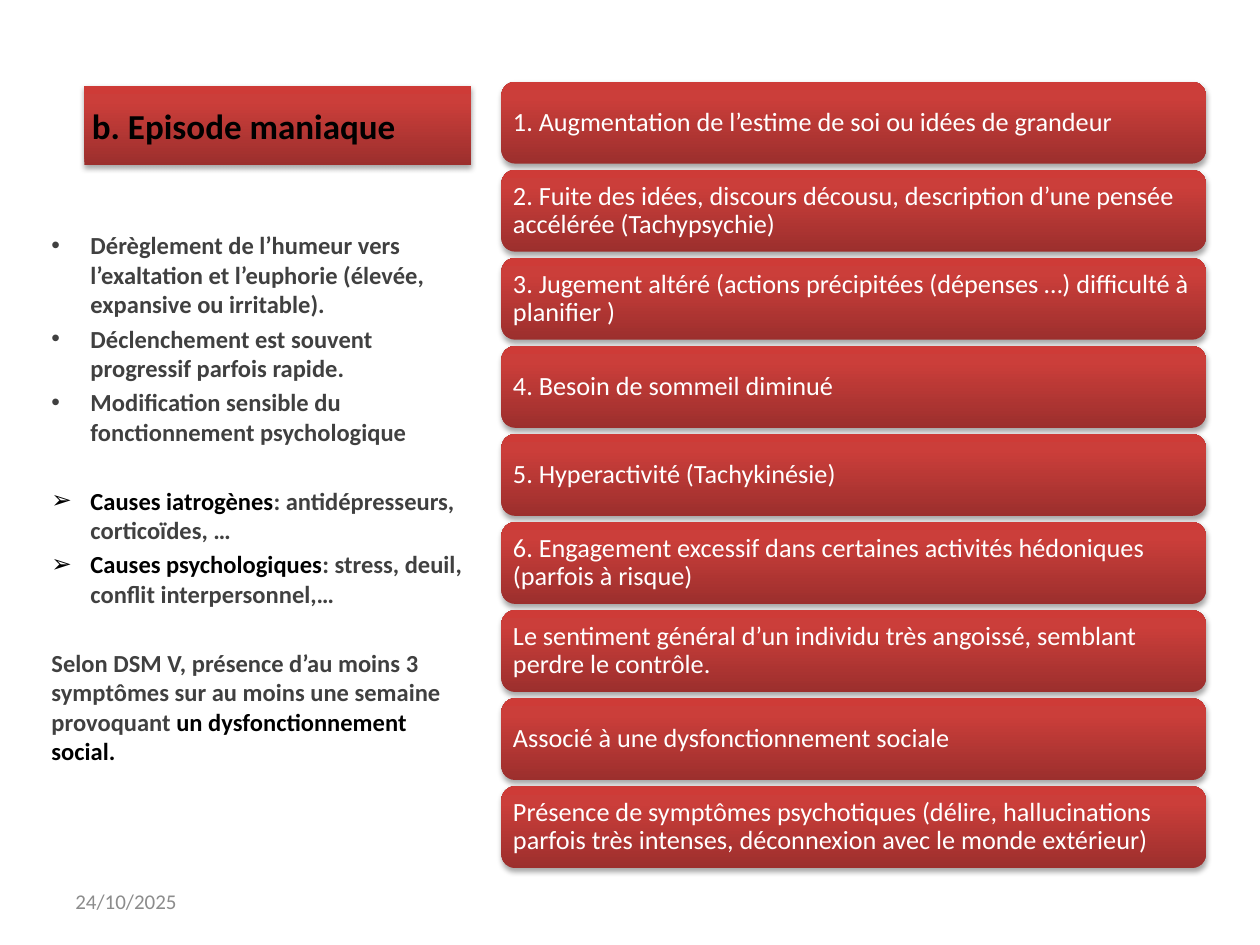
from lxml import etree
from pptx import Presentation
from pptx.dml.color import RGBColor
from pptx.enum.shapes import MSO_SHAPE
from pptx.enum.text import MSO_ANCHOR, PP_ALIGN
from pptx.oxml import parse_xml
from pptx.oxml.ns import nsdecls, qn
from pptx.util import Inches, Pt

BLACK = RGBColor(0x00, 0x00, 0x00)
WHITE = RGBColor(0xFF, 0xFF, 0xFF)
DARK_GREY = RGBColor(0x40, 0x40, 0x40)
DATE_GREY = RGBColor(0x8C, 0x8C, 0x8C)
RED_STOPS = [
    (0, RGBColor(0x9C, 0x2F, 0x2D)),
    (80, RGBColor(0xCB, 0x3E, 0x3A)),
    (100, RGBColor(0xCE, 0x3B, 0x37)),
]
FONT = "Calibri"
PARAGRAPH_GAP = Pt(2.8)
SECTION_GAP = Pt(22.6)

# Each entry: bullet, space before, runs as (text, colour)
DESCRIPTION = [
    ("•", None, [("Dérèglement de l’humeur vers l’exaltation et l’euphorie "
                  "(élevée, expansive ou irritable).", DARK_GREY)]),
    ("•", PARAGRAPH_GAP, [("Déclenchement est souvent progressif parfois rapide.", DARK_GREY)]),
    ("•", PARAGRAPH_GAP, [("Modification sensible du fonctionnement psychologique", DARK_GREY)]),
    ("➢", SECTION_GAP, [("Causes iatrogènes", BLACK),
                        (": antidépresseurs, corticoïdes, …", DARK_GREY)]),
    ("➢", PARAGRAPH_GAP, [("Causes psychologiques", BLACK),
                          (": stress, deuil, conflit interpersonnel,…", DARK_GREY)]),
    (None, SECTION_GAP, [("Selon DSM V, présence d’au moins 3 symptômes sur au moins "
                          "une semaine provoquant ", DARK_GREY),
                         ("un dysfonctionnement social.", BLACK)]),
]

SYMPTOMS = [
    "1. Augmentation de l’estime de soi ou idées de grandeur",
    "2. Fuite des idées, discours décousu, description d’une pensée accélérée (Tachypsychie)",
    "3. Jugement altéré (actions précipitées (dépenses …) difficulté à planifier )",
    "4. Besoin de sommeil diminué",
    "5. Hyperactivité (Tachykinésie)",
    "6. Engagement excessif dans certaines activités hédoniques (parfois à risque)",
    "Le sentiment général d’un individu très angoissé, semblant perdre le contrôle.",
    "Associé à une dysfonctionnement sociale",
    "Présence de symptômes psychotiques (délire, hallucinations parfois très intenses, "
    "déconnexion avec le monde extérieur)",
]


def style_font(font, size, color=None, bold=False):
    font.name = FONT
    font.size = Pt(size)
    font.bold = bold
    if color is not None:
        font.color.rgb = color


def add_red_panel(slide, preset, box, text, size, color, bold=False):
    """Add a shape with the red gradient, a soft shadow and left-aligned text."""
    shape = slide.shapes.add_shape(preset, *box)
    shape.line.fill.background()
    stops = "".join(
        f'<a:gs pos="{position * 1000}"><a:srgbClr val="{stop}"/></a:gs>'
        for position, stop in RED_STOPS
    )
    gradient = parse_xml(
        f'<a:gradFill {nsdecls("a")} rotWithShape="1"><a:gsLst>{stops}</a:gsLst>'
        '<a:lin ang="16200000" scaled="0"/></a:gradFill>'
    )
    shadow = parse_xml(
        f'<a:effectLst {nsdecls("a")}><a:outerShdw blurRad="{Pt(3.1)}" dist="{Pt(1.8)}" '
        'dir="5400000" rotWithShape="0"><a:srgbClr val="000000"><a:alpha val="35000"/>'
        '</a:srgbClr></a:outerShdw></a:effectLst>'
    )
    properties = shape.element.spPr
    properties.find(qn("a:ln")).addprevious(gradient)
    properties.append(shadow)

    frame = shape.text_frame
    frame.word_wrap = True
    frame.vertical_anchor = MSO_ANCHOR.MIDDLE
    frame.margin_left = frame.margin_right = Inches(0.06)
    frame.margin_top = frame.margin_bottom = Inches(0.06)
    paragraph = frame.paragraphs[0]
    paragraph.text = text
    paragraph.alignment = PP_ALIGN.LEFT
    style_font(paragraph.font, size, color, bold)
    return paragraph


def add_title(slide, box):
    add_red_panel(slide, MSO_SHAPE.RECTANGLE, box, "b. Episode maniaque", 20, BLACK, bold=True)


def set_bullet(paragraph, character):
    indent = Inches(0.31)
    properties = paragraph._p.get_or_add_pPr()
    properties.set("marL", str(indent))
    properties.set("indent", str(-indent))
    etree.SubElement(properties, qn("a:buFont"), typeface="Arial")
    etree.SubElement(properties, qn("a:buChar"), char=character)


def add_description(slide, box):
    frame = slide.shapes.add_textbox(*box).text_frame
    frame.word_wrap = True
    for index, (bullet, space_before, runs) in enumerate(DESCRIPTION):
        paragraph = frame.add_paragraph() if index else frame.paragraphs[0]
        if bullet:
            set_bullet(paragraph, bullet)
        if space_before is not None:
            paragraph.space_before = space_before
        style_font(paragraph.font, 14, bold=True)
        for text, color in runs:
            run = paragraph.add_run()
            run.text = text
            run.font.color.rgb = color


def add_symptoms(slide, box):
    """Stack one rounded tile per symptom evenly down the box."""
    left, top, width, height = box
    gap = Inches(0.05)
    tile_height = (height - gap * (len(SYMPTOMS) - 1)) // len(SYMPTOMS)
    for index, symptom in enumerate(SYMPTOMS):
        tile = (left, top + index * (tile_height + gap), width, tile_height)
        paragraph = add_red_panel(slide, MSO_SHAPE.ROUNDED_RECTANGLE, tile, symptom, 15, WHITE)
        paragraph.line_spacing = 0.9


def add_date(slide, box):
    frame = slide.shapes.add_textbox(*box).text_frame
    frame.word_wrap = True
    frame.vertical_anchor = MSO_ANCHOR.MIDDLE
    paragraph = frame.paragraphs[0]
    paragraph.text = "24/10/2025"
    style_font(paragraph.font, 12, DATE_GREY)


def main():
    presentation = Presentation()
    presentation.slide_width = Inches(10)
    presentation.slide_height = Inches(7.5)
    slide = presentation.slides.add_slide(presentation.slide_layouts[6])
    add_title(slide, (Inches(0.67), Inches(0.68), Inches(3.07), Inches(0.63)))
    add_description(slide, (Inches(0.31), Inches(1.78), Inches(3.51), Inches(5.13)))
    add_date(slide, (Inches(0.5), Inches(6.95), Inches(2.33), Inches(0.4)))
    add_symptoms(slide, (Inches(3.98), Inches(0.65), Inches(5.59), Inches(6.24)))
    presentation.save("out.pptx")


if __name__ == "__main__":
    main()
